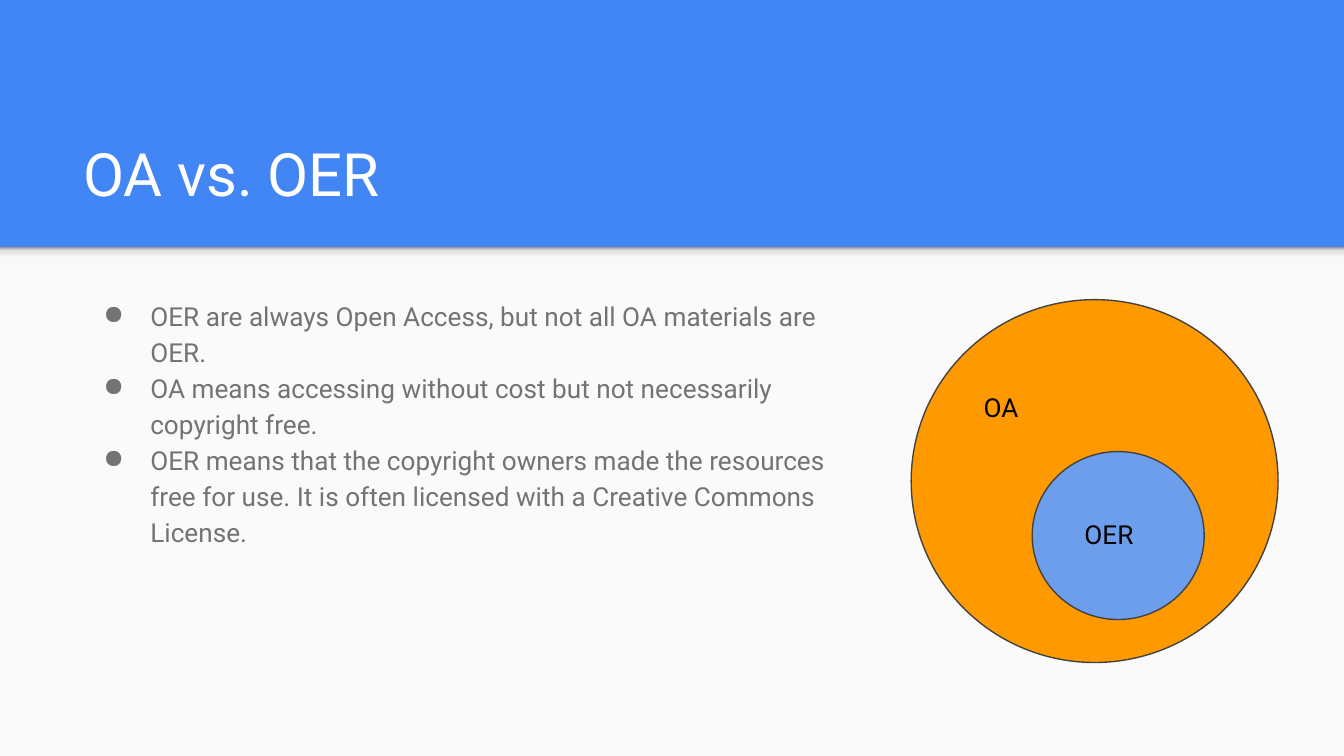
import pptx
import pptx.util
import pptx.dml.color
import pptx.enum.shapes
import pptx.enum.text
import pptx.oxml
import pptx.oxml.ns

COLORS = {
    "header": "4285F4",
    "panel": "FAFAFA",
    "title": "FFFFFF",
    "body": "737373",
    "label": "000000",
    "outline": "424242",
    "oa": "FF9900",
    "oer": "6D9EEB",
}
SHADOW_STOPS = [(0, "F9F9F9"), (36, "F9F9F9"), (80, "DEDEDE"), (100, "999999")]
FONT = "Roboto"
WIDTH = pptx.util.Inches(10)
HEIGHT = WIDTH * 9 // 16
HEADER_SHARE = 32.71
LEFT_SHARE = 5.2
BULLETS = [
    "OER are always Open Access, but not all OA materials are OER.",
    "OA means accessing without cost but not necessarily copyright free.",
    "OER means that the copyright owners made the resources free for use. "
    "It is often licensed with a Creative Commons License.",
]
SHAPES = pptx.enum.shapes.MSO_SHAPE
ANCHOR = pptx.enum.text.MSO_ANCHOR


def color(name):
    return pptx.dml.color.RGBColor.from_string(COLORS[name])


def place(x, y, w, h):
    return [round(size * share / 100)
            for size, share in zip((WIDTH, HEIGHT) * 2, (x, y, w, h))]


def add_filled(s, kind, box, fill, outline=None):
    sp = s.shapes.add_shape(kind, *place(*box))
    sp.shadow.inherit = False
    sp.fill.solid()
    sp.fill.fore_color.rgb = color(fill)
    if outline:
        sp.line.color.rgb = color(outline)
        sp.line.width = pptx.util.Pt(0.75)
    else:
        sp.line.fill.background()
    return sp


def add_header_shadow(s):
    sp = add_filled(s, SHAPES.RECTANGLE, (0, HEADER_SHARE, 100, 2.13), "panel")
    stops = "".join(
        f'<a:gs pos="{pos * 1000}"><a:srgbClr val="{rgb}"/></a:gs>'
        for pos, rgb in SHADOW_STOPS)
    gradient = pptx.oxml.parse_xml(
        f'<a:gradFill {pptx.oxml.ns.nsdecls("a")}><a:gsLst>{stops}</a:gsLst>'
        '<a:lin ang="16200000" scaled="0"/></a:gradFill>')
    props = sp._element.spPr
    props.replace(props.find(pptx.oxml.ns.qn("a:solidFill")), gradient)


def add_text(s, box, lines, size, fill, anchor=ANCHOR.TOP, wrap=True):
    tf = s.shapes.add_textbox(*place(*box)).text_frame
    tf.word_wrap = wrap
    tf.vertical_anchor = anchor
    tf.margin_left = tf.margin_right = pptx.util.Inches(0.1)
    tf.margin_top = tf.margin_bottom = pptx.util.Inches(0.1)
    tf.text = "\n".join(lines)
    for p in tf.paragraphs:
        p.font.name = FONT
        p.font.size = pptx.util.Pt(size)
        p.font.color.rgb = color(fill)
    return tf


def add_bullets(s, box, lines):
    tf = add_text(s, box, lines, 14, "body")
    for p in tf.paragraphs:
        p.line_spacing = 1.15
        props = p._p.get_or_add_pPr()
        props.set("marL", str(pptx.util.Inches(0.5)))
        props.set("indent", str(pptx.util.Inches(-0.35)))
        bullet = pptx.oxml.parse_xml(
            f'<a:buChar {pptx.oxml.ns.nsdecls("a")} char="●"/>')
        props.find(pptx.oxml.ns.qn("a:defRPr")).addprevious(bullet)


def add_set(s, circle, fill, label, label_box):
    add_filled(s, SHAPES.OVAL, circle, fill, "outline")
    add_text(s, label_box, [label], 14, "label", wrap=False)


def main():
    prs = pptx.Presentation()
    prs.slide_width, prs.slide_height = WIDTH, HEIGHT
    s = prs.slides.add_slide(prs.slide_layouts[6])
    s.background.fill.solid()
    s.background.fill.fore_color.rgb = color("header")

    add_filled(s, SHAPES.RECTANGLE,
               (0, HEADER_SHARE, 100, 100 - HEADER_SHARE), "panel")
    add_header_shadow(s)
    add_text(s, (LEFT_SHARE, 14.4, 89.9, 14.93), ["OA vs. OER"], 32, "title",
             ANCHOR.BOTTOM)
    add_bullets(s, (LEFT_SHARE, 37.33, 60.1, 52.62), BULLETS)
    add_set(s, (67.8, 39.64, 27.3, 48), "oa", "OA", (72.2, 49.96, 4.6, 7.82))
    add_set(s, (76.8, 59.73, 12.8, 22.22), "oer", "OER",
            (79.7, 66.84, 6.8, 7.82))
    prs.save("out.pptx")


if __name__ == "__main__":
    main()
